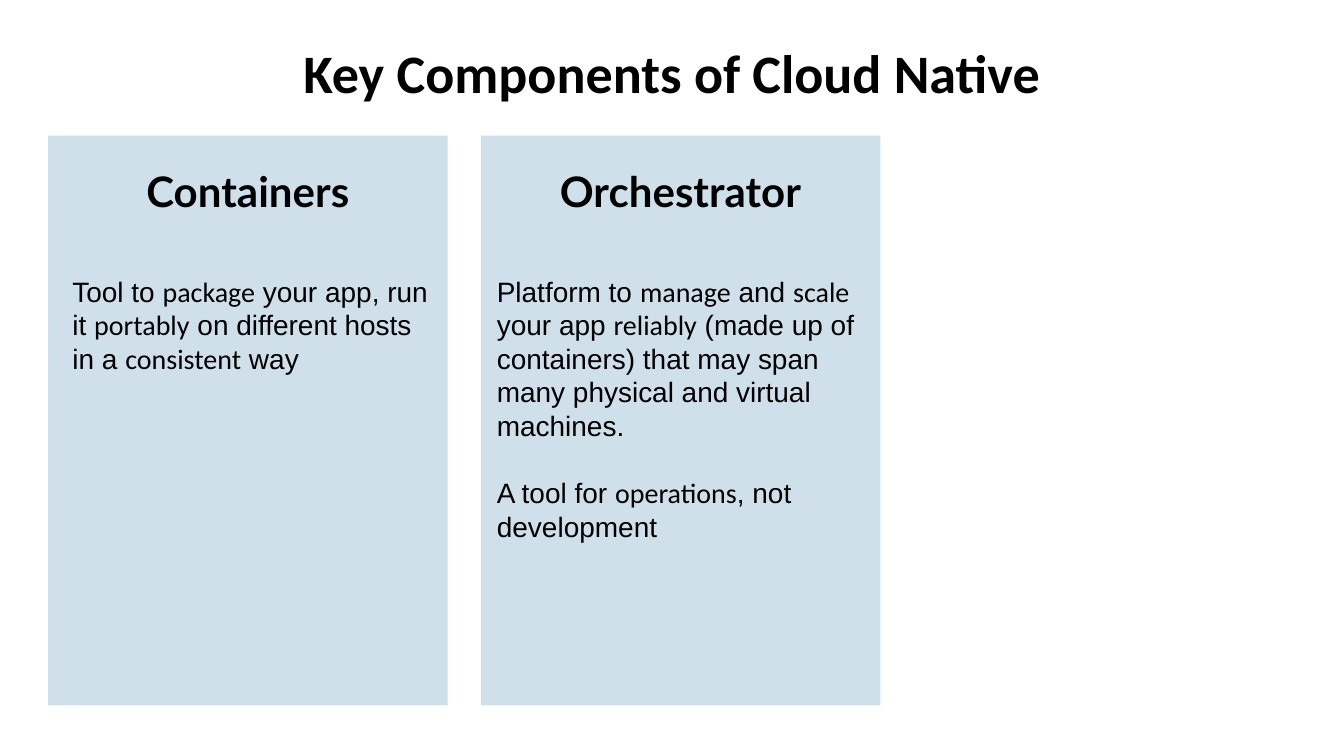
import pptx
import pptx.dml.color
import pptx.enum.shapes
import pptx.enum.text
import pptx.util

Pt = pptx.util.Pt

TITLE = "Key Components of Cloud Native"

# Each paragraph alternates plain and emphasised pieces, starting with plain.
COMPONENTS = [
    {
        "heading": "Containers",
        "body_indent": 13,
        "paragraphs": [
            ["Tool to ", "package", " your app, run it ", "portably",
             " on different hosts in a ", "consistent", " way"],
        ],
    },
    {
        "heading": "Orchestrator",
        "body_indent": 8.6,
        "paragraphs": [
            ["Platform to ", "manage", " and ", "scale", " your app ", "reliably",
             " (made up of containers) that may span many physical and virtual machines."],
            ["A tool for ", "operations", ", not development"],
        ],
    },
]

THEME = {
    "panel": pptx.dml.color.RGBColor(0xCF, 0xE0, 0xEA),
    "text": pptx.dml.color.RGBColor(0, 0, 0),
    "title": ("Calibri", 29),
    "heading": ("Lato", 22.5),
    "plain": ("Arial", 15),
    "emphasis": ("Calibri", 15),
    "line_height": 18,
}

PANEL_LEFT, PANEL_TOP, PANEL_WIDTH, PANEL_HEIGHT = 25.8, 72.7, 214, 305.3
PANEL_GAP = 17.8
HEADING_MARGIN = 4.3
BODY_TOP, BODY_WIDTH = 146.9, 196.6


def style_run(run, style, bold=False):
    run.font.name, size = THEME[style]
    run.font.size = Pt(size)
    run.font.bold = bold
    run.font.color.rgb = THEME["text"]


def add_text_frame(slide, left, top, width, height):
    box = slide.shapes.add_textbox(Pt(left), Pt(top), Pt(width), Pt(height))
    box.text_frame.word_wrap = True
    return box.text_frame


def add_centred_line(slide, text, style, left, top, width, height):
    frame = add_text_frame(slide, left, top, width, height)
    frame.text = text
    frame.paragraphs[0].alignment = pptx.enum.text.PP_ALIGN.CENTER
    style_run(frame.paragraphs[0].runs[0], style, bold=True)
    return frame


def add_panel(slide, left):
    panel = slide.shapes.add_shape(
        pptx.enum.shapes.MSO_SHAPE.RECTANGLE,
        Pt(left), Pt(PANEL_TOP), Pt(PANEL_WIDTH), Pt(PANEL_HEIGHT))
    panel.shadow.inherit = False
    panel.fill.solid()
    panel.fill.fore_color.rgb = THEME["panel"]
    panel.line.fill.background()


def add_body(slide, paragraphs, left):
    frame = add_text_frame(slide, left, BODY_TOP, BODY_WIDTH, 145)
    frame.margin_left = frame.margin_right = 0
    frame.margin_top = frame.margin_bottom = 0
    for number, pieces in enumerate(paragraphs):
        paragraph = frame.add_paragraph() if number else frame.paragraphs[0]
        paragraph.line_spacing = Pt(THEME["line_height"])
        if number:
            paragraph.space_before = Pt(THEME["line_height"])
        for position, piece in enumerate(pieces):
            run = paragraph.add_run()
            run.text = piece
            style_run(run, "emphasis" if position % 2 else "plain")


def main():
    presentation = pptx.Presentation()
    presentation.slide_width, presentation.slide_height = Pt(720), Pt(405)
    slide = presentation.slides.add_slide(presentation.slide_layouts[6])

    title = add_centred_line(slide, TITLE, "title", 34.6, 9.4, 650.8, 58.3)
    title.vertical_anchor = pptx.enum.text.MSO_ANCHOR.MIDDLE

    for column, component in enumerate(COMPONENTS):
        left = PANEL_LEFT + column * (PANEL_WIDTH + PANEL_GAP)
        add_panel(slide, left)
        add_centred_line(slide, component["heading"], "heading",
                         left + HEADING_MARGIN, 85,
                         PANEL_WIDTH - 2 * HEADING_MARGIN, 27.4)
        add_body(slide, component["paragraphs"], left + component["body_indent"])

    presentation.save("out.pptx")


if __name__ == "__main__":
    main()
